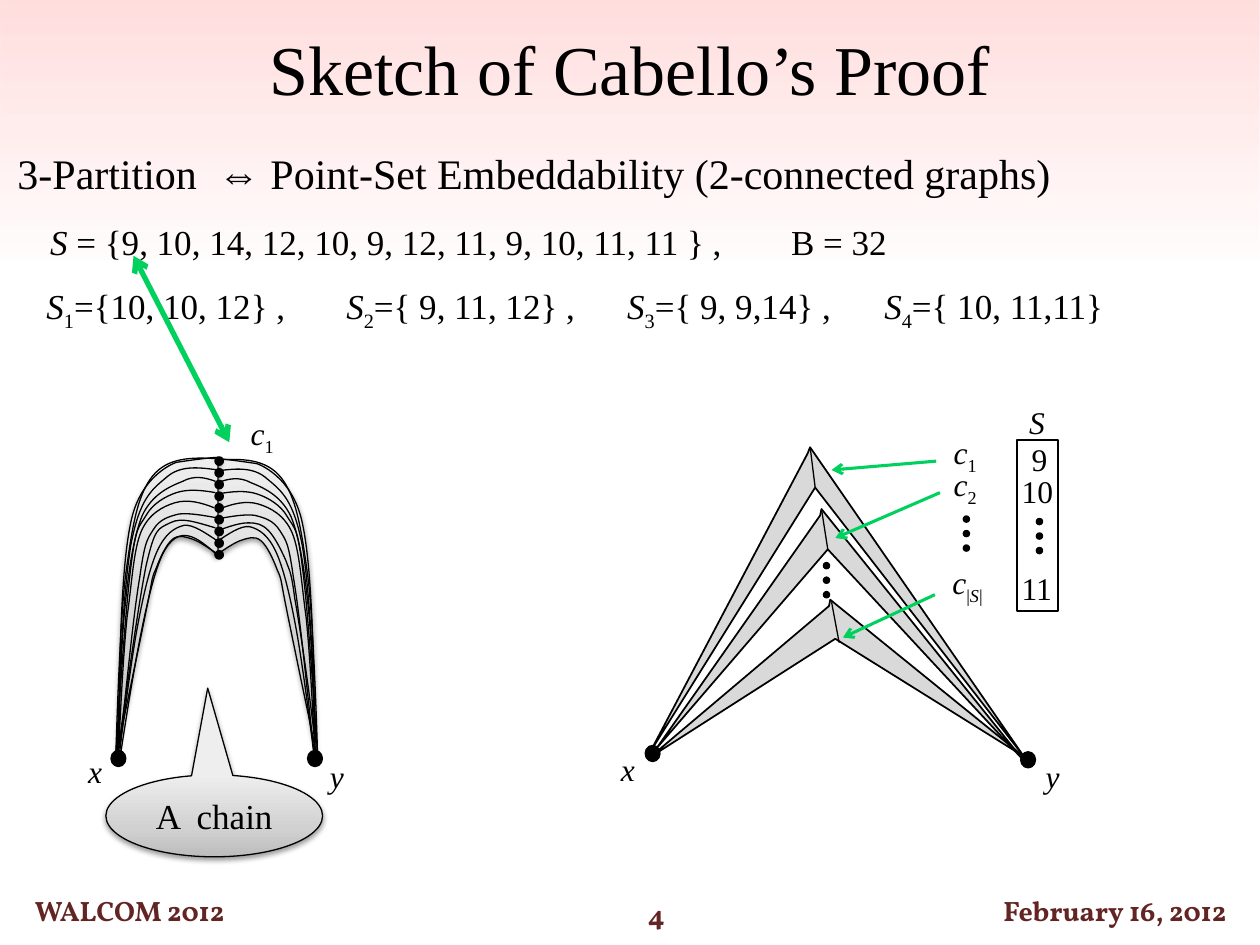
import pptx
import pptx.util
import pptx.oxml
import pptx.oxml.ns
import pptx.dml.color
import pptx.enum.shapes
import pptx.enum.text

Inches, Pt = pptx.util.Inches, pptx.util.Pt
RGB = pptx.dml.color.RGBColor
KIND = pptx.enum.shapes.MSO_SHAPE
ALIGN = pptx.enum.text.PP_ALIGN
MIDDLE = pptx.enum.text.MSO_ANCHOR.MIDDLE

BLACK = RGB(0x00, 0x00, 0x00)
MAROON = RGB(0x63, 0x25, 0x23)
GREEN = RGB(0x00, 0xD0, 0x5E)
GRAY = RGB(0xD9, 0xD9, 0xD9)

SERIF = {"name": "Times New Roman", "color": BLACK, "bold": False}
FOOT = {"name": "Vollkorn", "color": MAROON, "bold": True}
STYLES = {"": {"italic": False}, "i": {"italic": True},
          "s": {"italic": False}, "si": {"italic": True}}

# Gradient stops run from bottom to top: position, colour, opacity.
BLUSH = [(0, "FF0000", 0), (45, "FF0000", 0), (70, "FF0300", 0), (100, "FF0000", 13)]
SILVER = [(0, "BDBDBD", 100), (35, "D1D1D1", 100), (100, "EEEEEE", 100)]

# Right half of the chain: a start point, then three points per Bezier curve.
RIM = [(2.5, 5.94), (2.49, 5.23), (2.48, 4.52), (2.4, 4.15), (2.32, 3.77),
       (2.04, 3.68), (2.04, 3.68), (1.98, 3.67), (1.77, 3.64), (1.71, 3.64),
       (1.66, 3.64), (1.71, 3.7), (1.71, 3.7), (1.71, 3.7), (1.71, 4.41),
       (1.71, 4.41), (1.74, 4.39), (1.85, 4.31), (1.91, 4.29), (1.97, 4.27),
       (2.02, 4.25), (2.07, 4.29), (2.12, 4.33), (2.17, 4.44), (2.2, 4.52),
       (2.24, 4.61), (2.22, 4.56), (2.27, 4.81), (2.32, 5.06), (2.42, 5.54),
       (2.52, 6.02)]
STRANDS = [
    [(1.73, 3.65), (1.92, 3.64), (2.11, 3.64), (2.23, 3.79), (2.35, 3.94),
     (2.39, 4.19), (2.44, 4.55), (2.49, 4.91), (2.52, 5.98), (2.52, 5.98)],
    [(1.71, 3.74), (1.86, 3.72), (2.01, 3.7), (2.12, 3.8), (2.24, 3.9),
     (2.33, 3.97), (2.4, 4.33), (2.46, 4.7), (2.49, 5.33), (2.51, 5.97)],
    [(1.73, 3.83), (1.81, 3.8), (1.9, 3.78), (1.99, 3.83), (2.09, 3.87),
     (2.23, 3.93), (2.31, 4.1), (2.38, 4.27), (2.42, 4.54), (2.45, 4.85),
     (2.48, 5.16), (2.49, 5.56), (2.5, 5.97)],
    [(1.73, 3.92), (1.84, 3.9), (1.95, 3.89), (2.04, 3.92), (2.13, 3.95),
     (2.23, 4.01), (2.28, 4.1), (2.34, 4.2), (2.36, 4.18), (2.4, 4.5),
     (2.44, 4.81), (2.48, 5.4), (2.52, 5.98)],
    [(1.74, 4.04), (1.84, 4), (1.95, 3.97), (2.05, 4), (2.15, 4.03),
     (2.26, 4.09), (2.32, 4.23), (2.38, 4.38), (2.39, 4.61), (2.43, 4.9),
     (2.46, 5.19), (2.48, 5.59), (2.5, 5.99)],
    [(1.72, 4.12), (1.83, 4.1), (1.94, 4.08), (2.02, 4.09), (2.1, 4.11),
     (2.17, 4.13), (2.22, 4.21), (2.27, 4.29), (2.29, 4.3), (2.33, 4.59),
     (2.38, 4.88), (2.43, 5.41), (2.49, 5.95)],
    [(1.72, 4.3), (1.81, 4.24), (1.91, 4.17), (1.98, 4.18), (2.06, 4.2),
     (2.13, 4.25), (2.19, 4.38), (2.25, 4.51), (2.3, 4.72), (2.35, 4.99),
     (2.4, 5.26), (2.47, 5.81), (2.49, 5.98), (2.51, 6.14), (2.5, 6.07),
     (2.49, 5.99)]]
RIGHT = [[(1.73, 4.21), (1.82, 4.18), (1.9, 4.15), (1.97, 4.15), (2.04, 4.15),
          (2.08, 4.16), (2.13, 4.21), (2.18, 4.26), (2.23, 4.36), (2.27, 4.45),
          (2.3, 4.54), (2.31, 4.52), (2.34, 4.75), (2.38, 4.97), (2.44, 5.38),
          (2.49, 5.79)]]
LEFT = [[(1.72, 4.4), (1.57, 4.27), (1.42, 4.14), (1.29, 4.4), (1.17, 4.66),
         (1.06, 5.32), (0.96, 5.97)],
        [(1.71, 4.19), (1.57, 4.15), (1.44, 4.1), (1.35, 4.15), (1.25, 4.2),
         (1.23, 4.19), (1.16, 4.49), (1.1, 4.79), (1.02, 5.37), (0.94, 5.94)]]

# Kites, each followed by the ends of its spine.
KITES = [
    ([(5.16, 6.01), (6.58, 4.81), (6.59, 4.76), (8.12, 6), (6.63, 5.07)], (6.6, 4.78), (6.66, 5.1)),
    ([(5.16, 5.97), (6.41, 3.6), (6.43, 3.55), (8.13, 6.01), (6.47, 3.87)], (6.43, 3.55), (6.47, 3.87)),
    ([(5.21, 5.94), (6.51, 4.09), (6.52, 4.04), (8.12, 6.03), (6.57, 4.36)], (6.52, 4.04), (6.57, 4.36))]

C = ("c", "i")
LABELS = [
    (1.89, 3.24, 0.41, [C, ("1", "s")]), (2.52, 5.96, 0.31, [("y", "i")]),
    (0.6, 5.92, 0.31, [("x", "i")]), (8.2, 5.96, 0.31, [("y", "i")]),
    (4.83, 5.9, 0.31, [("x", "i")]), (7.47, 3.39, 0.41, [C, ("1", "s")]),
    (7.47, 3.64, 0.41, [C, ("2", "s")]),
    (7.46, 4.42, 0.47, [C, ("|", "s"), ("S", "si"), ("|", "s")]),
    (8.09, 3.44, 0.33, [("9", "")]), (8.01, 3.7, 0.45, [("10", "")]),
    (8.01, 4.47, 0.45, [("11", "")]), (8.07, 3.15, 0.39, [("S", "i")])]


def node(xml):
    head, tail = xml.split(" ", 1)
    return pptx.oxml.parse_xml(f"{head} {pptx.oxml.ns.nsdecls('a')} {tail}")


def paint(shape, fill=None, line=None, width=1, shade=False):
    """Set fill (colour, list of stops or None), outline and soft shadow."""
    shape.shadow.inherit = False
    if isinstance(fill, RGB):
        shape.fill.solid()
        shape.fill.fore_color.rgb = fill
    else:
        shape.fill.background()
    if isinstance(fill, list):
        stops = "".join(f'<a:gs pos="{p * 1000}"><a:srgbClr val="{c}">'
                        f'<a:alpha val="{a * 1000}"/></a:srgbClr></a:gs>' for p, c, a in fill)
        old = shape._element.spPr.find(pptx.oxml.ns.qn("a:noFill"))
        old.getparent().replace(old, node(
            f'<a:gradFill rotWithShape="1"><a:gsLst>{stops}</a:gsLst>'
            '<a:lin ang="16200000" scaled="0"/></a:gradFill>'))
    if line is None:
        shape.line.fill.background()
    else:
        shape.line.color.rgb = line
        shape.line.width = Pt(width)
    if shade:
        shape._element.spPr.find(pptx.oxml.ns.qn("a:effectLst")).append(node(
            f'<a:outerShdw blurRad="{Pt(3.1)}" dist="{Pt(1.6)}" dir="5400000" rotWithShape="0">'
            '<a:srgbClr val="000000"><a:alpha val="38000"/></a:srgbClr></a:outerShdw>'))


def write(shape, runs, size, look=SERIF, align=ALIGN.LEFT, wrap=True, tabs=()):
    """Fill a shape with (text, style) runs; tabs are stops in inches."""
    frame = shape.text_frame
    frame.word_wrap = wrap
    para = frame.paragraphs[0]
    para.alignment = align
    if tabs:
        stops = "".join(f'<a:tab pos="{Inches(t)}" algn="l"/>' for t in tabs)
        para._p.get_or_add_pPr().append(node(f'<a:tabLst >{stops}</a:tabLst>'))
    for text, style in runs:
        run = para.add_run()
        run.text = text
        run.font.color.rgb = look["color"]
        form = {"name": look["name"], "bold": look["bold"], "size": Pt(size), **STYLES[style]}
        for key, value in form.items():
            setattr(run.font, key, value)
        if style.startswith("s"):
            run._r.get_or_add_rPr().set("baseline", "-25000")


def block(slide, kind, *box, **style):
    shape = slide.shapes.add_shape(kind, *map(Inches, box))
    paint(shape, **style)
    return shape


def label(slide, box, runs, size, **style):
    write(slide.shapes.add_textbox(*map(Inches, box)), runs, size, **style)


def dot(slide, x, y, w, h, width=None):
    """Black dot centred on x, y."""
    block(slide, KIND.OVAL, x - w / 2, y - h / 2, w, h, fill=BLACK,
          line=BLACK if width else None, width=width)


def trace(slide, points, close=False, curved=False, **style):
    """Draw an outline; when curved, each three points make a Bezier curve."""
    first, *rest = [(Inches(x), Inches(y)) for x, y in points]
    pen = slide.shapes.build_freeform(*first)
    pen.add_line_segments(rest, close=close)
    shape = pen.convert_to_shape()
    if curved:
        bend(shape)
    paint(shape, **style)


def bend(shape):
    """Turn each three line segments into one cubic Bezier curve."""
    legs = list(shape._element.iter(pptx.oxml.ns.qn("a:lnTo")))
    for i in range(0, len(legs), 3):
        curve = node("<a:cubicBezTo />")
        legs[i].addprevious(curve)
        for leg in legs[i:i + 3]:
            curve.append(leg[0])
            leg.getparent().remove(leg)


def flip(points):
    return [(3.44 - x, y - 0.01) for x, y in points]


def link(slide, start, end, color, width, ends=()):
    line = slide.shapes.add_connector(pptx.enum.shapes.MSO_CONNECTOR.STRAIGHT,
                                      *map(Inches, (*start, *end)))
    line.line.color.rgb = color
    line.line.width = Pt(width)
    for tip in ends:
        line.line._get_or_add_ln().append(node(f'<a:{tip} type="arrow"/>'))
    line._element.spPr.append(node("<a:effectLst />"))


def frame(slide):
    """Backdrop, footer and headings."""
    block(slide, KIND.RECTANGLE, 0, 0, 10, 7.01, fill=BLUSH)
    for x, y, w, text in [(0, 7.05, 2.06, "WALCOM 2012"), (7.7, 7.05, 2.3, "February 16, 2012"),
                          (4.18, 7.08, 2.06, "4")]:
        shape = block(slide, KIND.ROUNDED_RECTANGLE, x, y, w, 0.35)
        shape.text_frame.vertical_anchor = MIDDLE
        write(shape, [(text, "")], 16, FOOT, ALIGN.CENTER)
    label(slide, (0, 0.15, 10, 0.77), [("Sketch of Cabello’s Proof", "")], 40, align=ALIGN.CENTER)
    label(slide, (0.04, 1.12, 8.5, 0.5),
          [("3-Partition  ⇔ Point-Set Embeddability (2-connected graphs)", "")], 24, wrap=False)
    label(slide, (0.3, 1.7, 6.9, 0.44), [("S", "i"), (
        " = {9, 10, 14, 12, 10, 9, 12, 11, 9, 10, 11, 11 } ,\tB = 32", "")], 20,
        wrap=False, tabs=[5.88])
    sets = ["={10, 10, 12} ,\t", "={ 9, 11, 12} ,\t", "={ 9, 9,14} ,\t", "={ 10, 11,11}"]
    runs = [run for i, text in enumerate(sets, 1)
            for run in (("S", "i"), (str(i), "s"), (text, ""))]
    label(slide, (0.27, 2.21, 9.73, 0.77), runs, 20, tabs=[2.38, 4.61, 6.65])


def chain(slide):
    bubble = block(slide, KIND.OVAL_CALLOUT, 0.84, 6.15, 1.72, 0.65,
                   fill=SILVER, line=BLACK, width=0.75, shade=True)
    bubble.adjustments[0], bubble.adjustments[1] = -0.03, -1.56
    bubble.text_frame.vertical_anchor = MIDDLE
    write(bubble, [("A  chain", "")], 20, align=ALIGN.CENTER)
    thin = {"curved": True, "line": BLACK, "width": 0.75}
    for rim, strands in [(RIM, STRANDS + RIGHT), (flip(RIM), [flip(s) for s in STRANDS] + LEFT)]:
        trace(slide, rim, fill=SILVER, shade=True, **thin)
        for strand in strands:
            trace(slide, strand, **thin)
    for i in range(9):
        dot(slide, 1.74, 3.66 + i * 0.093, 0.06, 0.06, 1.25)
    for x in (0.94, 2.5):
        dot(slide, x, 6.02, 0.1, 0.11, 2)
    link(slide, (1.06, 2.03), (1.82, 3.51), GREEN, 3, ("headEnd", "tailEnd"))


def graph(slide):
    for points, top, low in KITES:
        trace(slide, points, close=True, fill=GRAY, line=BLACK)
        link(slide, top, low, BLACK, 0.75)
    for x, y in [(5.18, 5.98), (8.16, 6.03)]:
        dot(slide, x, y, 0.1, 0.11, 2)
    for x, y in [(6.56, 4.49), (7.67, 4.12), (8.25, 4.14)]:
        for i in range(3):
            dot(slide, x, y + i * 0.115, 0.06, 0.06)
    block(slide, KIND.RECTANGLE, 8.07, 3.49, 0.33, 1.36, line=BLACK)
    for start, end in [((6.6, 3.73), (7.43, 3.66)), ((6.63, 4.27), (7.46, 3.91)),
                       ((6.69, 5.06), (7.42, 4.72))]:
        link(slide, start, end, GREEN, 1.75, ("headEnd",))


def main():
    deck = pptx.Presentation()
    deck.slide_width, deck.slide_height = Inches(10), Inches(7.5)
    slide = deck.slides.add_slide(deck.slide_layouts[6])
    frame(slide)
    chain(slide)
    graph(slide)
    for x, y, w, runs in LABELS:
        label(slide, (x, y, w, 0.4), runs, 18, wrap=False)
    deck.save("out.pptx")


if __name__ == "__main__":
    main()
